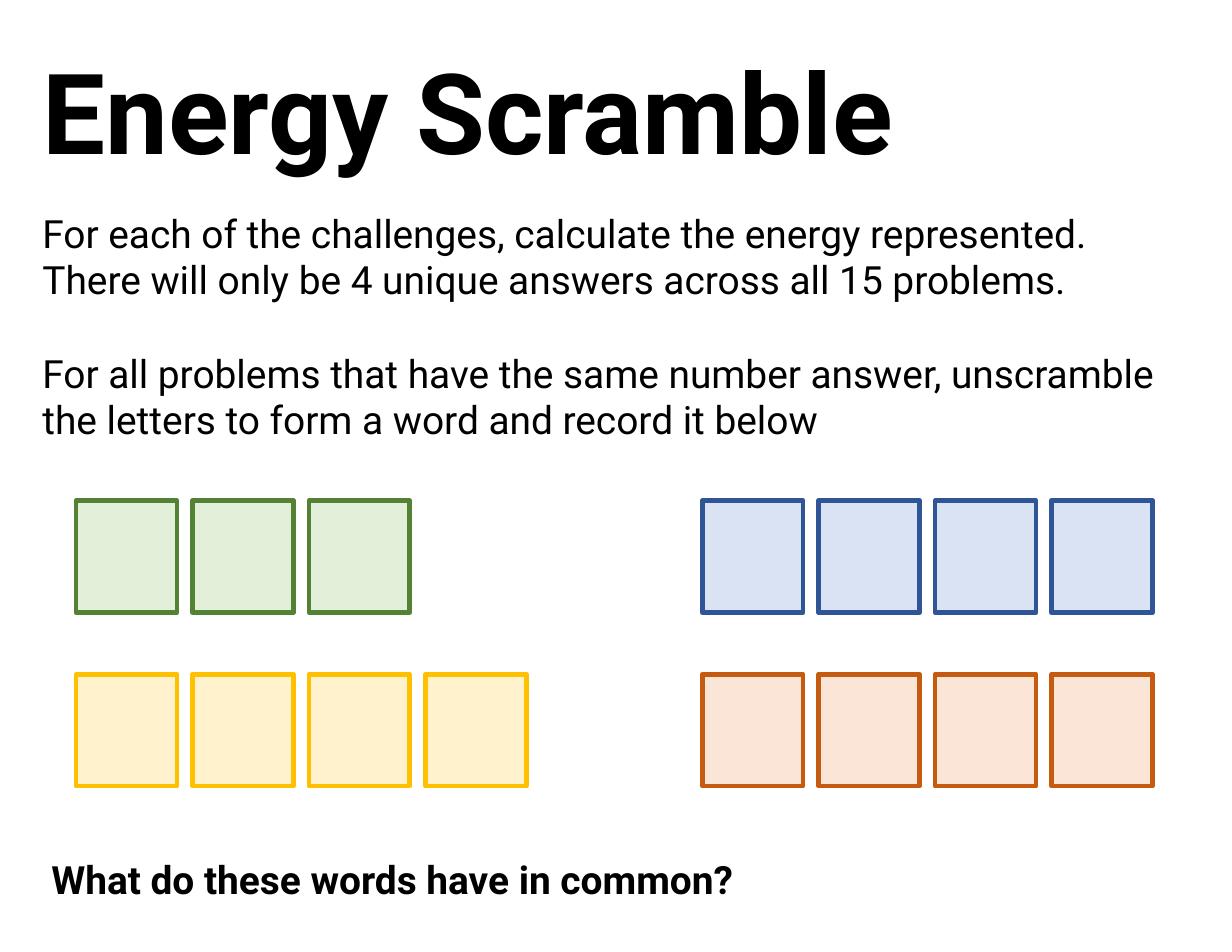
from pptx import Presentation
from pptx.dml.color import RGBColor
from pptx.enum.shapes import MSO_SHAPE
from pptx.enum.text import MSO_ANCHOR, MSO_AUTO_SIZE, PP_ALIGN
from pptx.util import Inches, Pt

RECTANGLE = MSO_SHAPE.RECTANGLE
TOP, LEFT, FIT_SHAPE = MSO_ANCHOR.TOP, PP_ALIGN.LEFT, MSO_AUTO_SIZE.SHAPE_TO_FIT_TEXT

BLACK = RGBColor(0x00, 0x00, 0x00)
GREEN, PALE_GREEN = RGBColor(0x54, 0x82, 0x35), RGBColor(0xE2, 0xF0, 0xD9)
BLUE, PALE_BLUE = RGBColor(0x2F, 0x55, 0x97), RGBColor(0xDA, 0xE3, 0xF3)
GOLD, PALE_GOLD = RGBColor(0xFF, 0xC0, 0x00), RGBColor(0xFF, 0xF2, 0xCC)
ORANGE, PALE_ORANGE = RGBColor(0xC5, 0x5A, 0x11), RGBColor(0xFB, 0xE5, 0xD6)

FONT = "Roboto"
TITLE = "Energy Scramble"
INSTRUCTIONS = [
    "For each of the challenges, calculate the energy represented. "
    "There will only be 4 unique answers across all 15 problems.",
    "For all problems that have the same number answer, unscramble "
    "the letters to form a word and record it below",
]
QUESTION = "What do these words have in common?"

# Word grid column, word grid row, letter count, outline, fill
WORDS = [
    (0, 0, 3, GREEN, PALE_GREEN),
    (1, 0, 4, BLUE, PALE_BLUE),
    (0, 1, 4, GOLD, PALE_GOLD),
    (1, 1, 4, ORANGE, PALE_ORANGE),
]
GRID_LEFT, GRID_TOP = 0.68, 4.47
COLUMN_PITCH, ROW_PITCH = 5.59, 1.55
LETTER_WIDTH, LETTER_HEIGHT, LETTER_PITCH = 0.9, 1, 1.04


def write(box, paragraphs, size, bold=False, wrap=True, gap=0):
    """Fill a box with left-aligned paragraphs, gap points apart."""
    frame = box.text_frame
    frame.text = "\n".join(paragraphs)
    frame.word_wrap = wrap
    frame.auto_size = FIT_SHAPE
    frame.vertical_anchor = TOP
    for index, paragraph in enumerate(frame.paragraphs):
        paragraph.alignment = LEFT
        paragraph.line_spacing = 1.0
        paragraph.space_before = Pt(gap if index else 0)
        for run in paragraph.runs:
            run.font.name = FONT
            run.font.size = Pt(size)
            run.font.bold = bold
            run.font.color.rgb = BLACK


def add_word(slide, column, row, letters, outline, fill):
    left = GRID_LEFT + column * COLUMN_PITCH
    top = GRID_TOP + row * ROW_PITCH
    for index in range(letters):
        letter = slide.shapes.add_shape(
            RECTANGLE, Inches(left + index * LETTER_PITCH), Inches(top),
            Inches(LETTER_WIDTH), Inches(LETTER_HEIGHT))
        letter.shadow.inherit = False
        letter.fill.solid()
        letter.fill.fore_color.rgb = fill
        letter.line.color.rgb = outline
        letter.line.width = Pt(3)


def main():
    presentation = Presentation()
    presentation.slide_width, presentation.slide_height = Inches(11), Inches(8.5)
    slide = presentation.slides.add_slide(presentation.slide_layouts[5])

    title = slide.shapes.title
    title.left, title.top = Inches(0.28), Inches(0.33)
    title.width, title.height = Inches(8.13), Inches(1.31)
    write(title, [TITLE], 72, bold=True, wrap=False)

    instructions = slide.shapes.add_textbox(
        Inches(0.28), Inches(1.82), Inches(10.25), Inches(2.2))
    write(instructions, INSTRUCTIONS, 25, gap=30)

    for word in WORDS:
        add_word(slide, *word)

    question = slide.shapes.add_textbox(
        Inches(0.36), Inches(7.59), Inches(6.68), Inches(0.52))
    write(question, [QUESTION], 25, bold=True, wrap=False)

    presentation.save("out.pptx")


if __name__ == "__main__":
    main()
